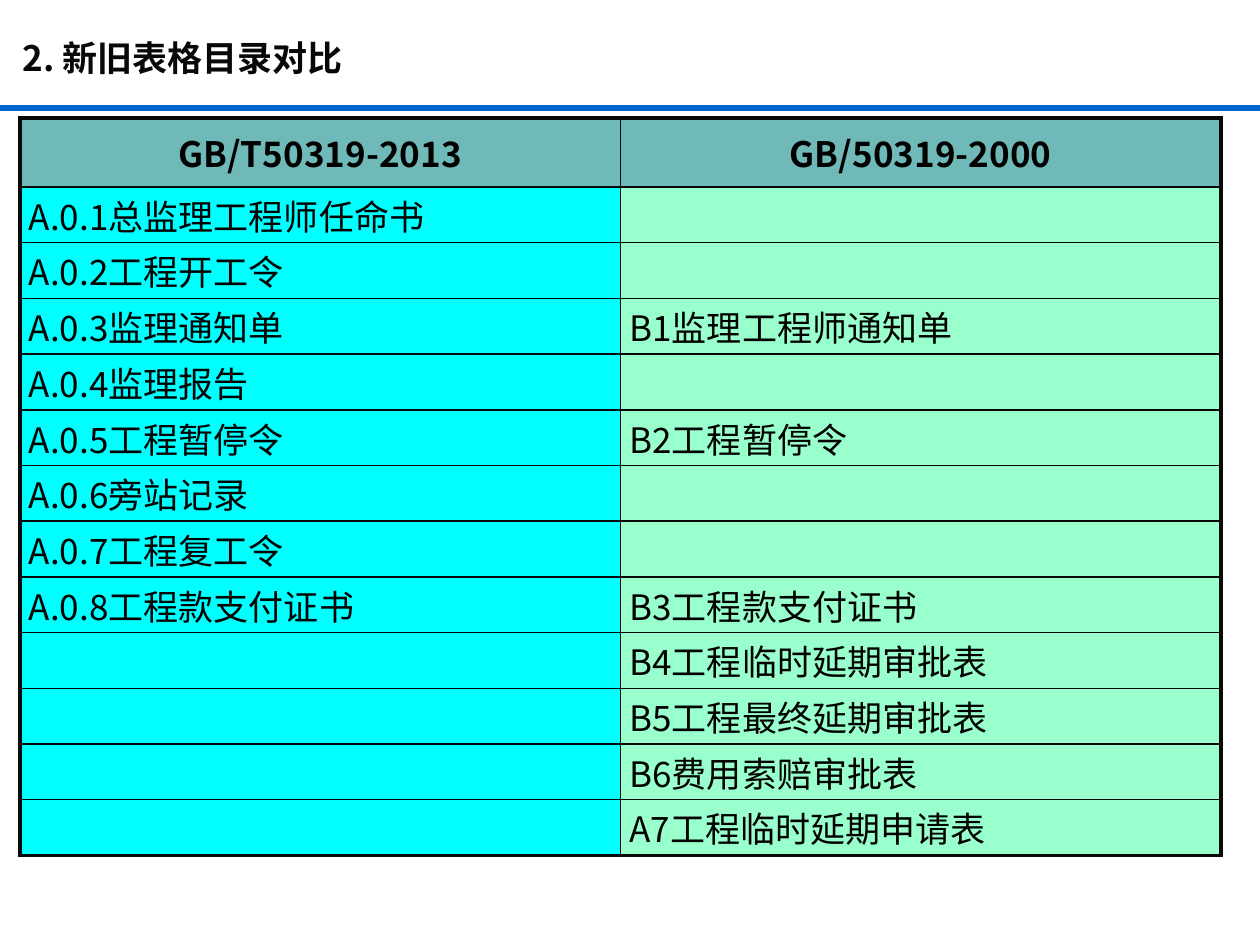
from lxml.etree import SubElement
from pptx import Presentation
from pptx.dml.color import RGBColor
from pptx.enum.shapes import MSO_CONNECTOR
from pptx.enum.text import MSO_ANCHOR, PP_ALIGN
from pptx.oxml.ns import qn
from pptx.util import Emu, Pt

COLORS = {
    "rule": "0066CC", "ink": "080808", "text": "000000",
    "header": "6FBAB8", "new": "00FFFF", "old": "99FFCC",
}
FONT = "Noto Sans CJK SC"
THICK, THIN = 2.25, 1

HEADER = ("GB/T50319-2013", "GB/50319-2000")
ROWS = [
    ("A.0.1总监理工程师任命书", ""),
    ("A.0.2工程开工令", ""),
    ("A.0.3监理通知单", "B1监理工程师通知单"),
    ("A.0.4监理报告", ""),
    ("A.0.5工程暂停令", "B2工程暂停令"),
    ("A.0.6旁站记录", ""),
    ("A.0.7工程复工令", ""),
    ("A.0.8工程款支付证书", "B3工程款支付证书"),
    ("", "B4工程临时延期审批表"),
    ("", "B5工程最终延期审批表"),
    ("", "B6费用索赔审批表"),
    ("", "A7工程临时延期申请表"),
]


def px(n):
    return Emu(round(n * 914400 / 126))


def rgb(name):
    return RGBColor.from_string(COLORS[name])


class Deck:
    def __init__(self, width, height):
        self.prs = Presentation()
        self.prs.slide_width, self.prs.slide_height = px(width), px(height)
        self.s = self.prs.slides.add_slide(self.prs.slide_layouts[6])

    def set_text(self, p, text, color, bold=False, size=20):
        p.text = text
        f = p.font
        f.name, f.size, f.bold = FONT, Pt(size), bold
        f.color.rgb = rgb(color)
        defaults = p._p.pPr.find(qn("a:defRPr"))
        SubElement(defaults, qn("a:ea")).set("typeface", FONT)

    def rule(self, x1, y1, x2, y2, color, width):
        line = self.s.shapes.add_connector(
            MSO_CONNECTOR.STRAIGHT, px(x1), px(y1), px(x2), px(y2))
        line.line.color.rgb = rgb(color)
        line.line.width = Pt(width)
        SubElement(line._element.spPr, qn("a:effectLst"))

    def title(self, x, y, w, h, text):
        tf = self.s.shapes.add_textbox(px(x), px(y), px(w), px(h)).text_frame
        tf.word_wrap = True
        tf.vertical_anchor = MSO_ANCHOR.MIDDLE
        p = tf.paragraphs[0]
        p.line_spacing = 0.85
        self.set_text(p, text, "ink", bold=True)

    def borders(self, cell, widths):
        tc_pr = cell._tc.get_or_add_tcPr()
        for side, width in widths.items():
            ln = SubElement(tc_pr, qn(f"a:ln{side}"), w=str(Pt(width)))
            fill = SubElement(ln, qn("a:solidFill"))
            SubElement(fill, qn("a:srgbClr"), val=COLORS["ink"])

    def cell(self, cell, text, fill, widths, is_header):
        cell.margin_left = cell.margin_right = px(9)
        cell.margin_top = cell.margin_bottom = 0
        cell.vertical_anchor = MSO_ANCHOR.MIDDLE
        self.borders(cell, widths)
        cell.fill.solid()
        cell.fill.fore_color.rgb = rgb(fill)
        p = cell.text_frame.paragraphs[0]
        p.alignment = PP_ALIGN.CENTER if is_header else PP_ALIGN.JUSTIFY
        self.set_text(p, text, "text", bold=is_header)

    def table(self, x, y, w, header_h, body_h, rows, fills):
        n_rows, n_cols = len(rows), len(rows[0])
        table = self.s.shapes.add_table(
            n_rows, n_cols, px(x), px(y), px(w), px(header_h + body_h)).table
        table.first_row = table.horz_banding = False
        for r, values in enumerate(rows):
            table.rows[r].height = px(body_h / (n_rows - 1) if r else header_h)
            for c, text in enumerate(values):
                # Thick outer frame, thin inner grid
                widths = {
                    "L": THIN if c else THICK,
                    "R": THICK if c == n_cols - 1 else THIN,
                    "T": THIN if r else THICK,
                    "B": THICK if r == n_rows - 1 else THIN,
                }
                fill = fills[c] if r else "header"
                self.cell(table.cell(r, c), text, fill, widths, r == 0)


def main():
    deck = Deck(1260, 945)
    # Title band
    deck.rule(0, 108, 1260, 108, "rule", 3.5)
    deck.title(10, 16, 1091, 89, "2. 新旧表格目录对比")
    # Comparison of the two form lists
    deck.table(20, 118, 1201, 69, 669, [HEADER] + ROWS, ("new", "old"))
    deck.prs.save("out.pptx")


if __name__ == "__main__":
    main()
